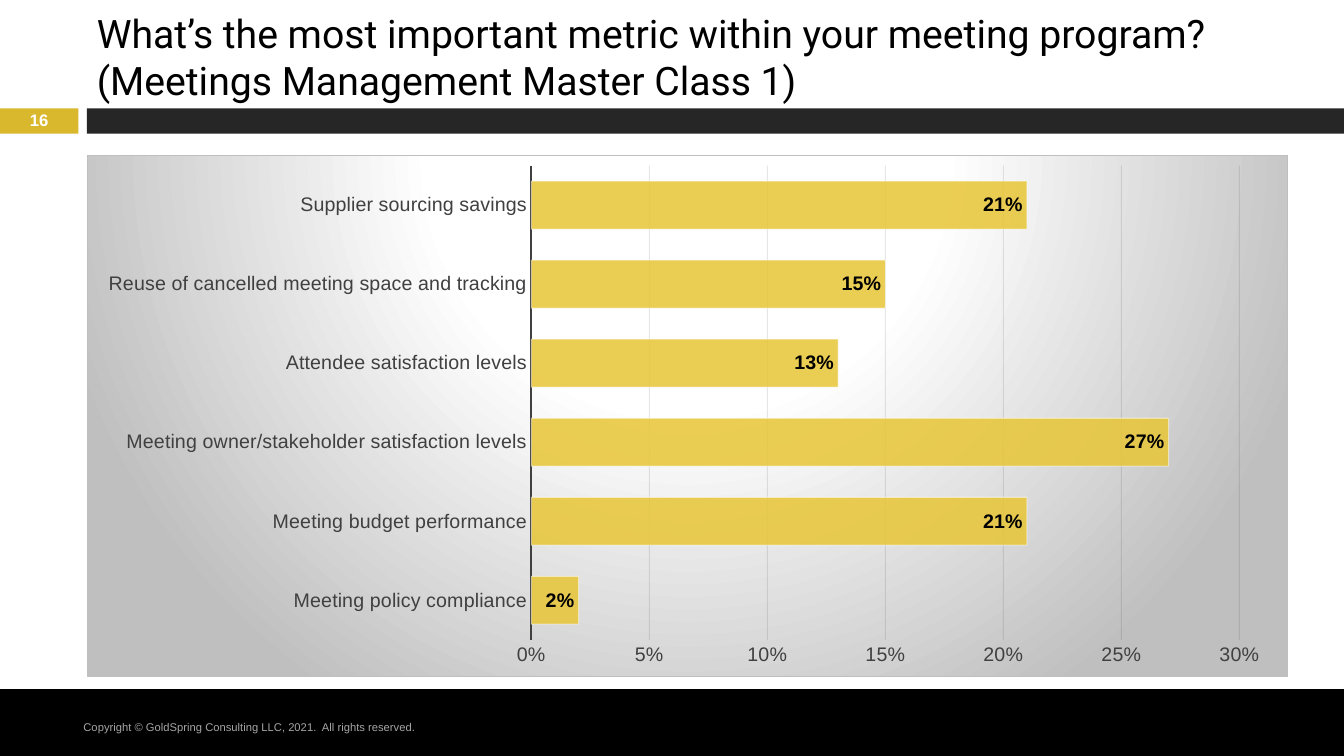
from lxml import etree
from pptx import Presentation
from pptx.chart.data import CategoryChartData
from pptx.dml.color import RGBColor
from pptx.enum import chart as ch, shapes, text
from pptx.oxml import parse_xml
from pptx.oxml.ns import nsdecls, qn
from pptx.util import Pt

WIDTH, HEIGHT = 960, 540
MARGIN = 62
METRICS = [
    ("Meeting policy compliance", 0.02),
    ("Meeting budget performance", 0.21),
    ("Meeting owner/stakeholder satisfaction levels", 0.27),
    ("Attendee satisfaction levels", 0.13),
    ("Reuse of cancelled meeting space and tracking", 0.15),
    ("Supplier sourcing savings", 0.21),
]


def color(value):
    return RGBColor.from_string(value)


def style(font, size, value, name="Arial", bold=False):
    font.size, font.name, font.bold = Pt(size), name, bold
    font.color.rgb = color(value)


def set_line(line, value, width):
    line.color.rgb = color(value)
    line.width = Pt(width)


def set_alpha(element, percent):
    """Make every solid colour below the element partly transparent."""
    for node in element.iter(qn("a:srgbClr")):
        etree.SubElement(node, qn("a:alpha")).set("val", str(percent * 1000))


def add_bar(page, box, value):
    bar = page.shapes.add_shape(shapes.MSO_SHAPE.RECTANGLE, *map(Pt, box))
    bar.shadow.inherit = False
    bar.fill.solid()
    bar.fill.fore_color.rgb = color(value)
    bar.line.fill.background()
    return bar


def add_label(page, box, words, size, value, bold=False):
    label = page.shapes.add_textbox(*map(Pt, box))
    frame = label.text_frame
    frame.word_wrap = True
    frame.vertical_anchor = text.MSO_ANCHOR.MIDDLE
    frame.text = words
    para = frame.paragraphs[0]
    style(para.runs[0].font, size, value, bold=bold)
    return para


def add_footer(page, box):
    left, top, width, height = box
    band = add_bar(page, box, "000000")
    set_line(band.line, "000000", 1.5)
    add_label(page, (left + 52.5, top + 18, 353, 16),
              "Copyright © GoldSpring Consulting LLC, 2021.  All rights reserved.",
              8, "A6A6A6")


def add_number_strip(page, box, number):
    left, top, width, height = box
    tab = 56
    add_bar(page, box, "FFFFFF")
    add_bar(page, (left, top + 4, tab, 18), "DAB82E")
    add_bar(page, (left + MARGIN, top + 4, width - MARGIN, 18), "262626")
    para = add_label(page, (left, top + 4, tab, 19.5), number, 11.9, "FFFFFF", True)
    para.alignment = text.PP_ALIGN.CENTER
    para.line_spacing = 0.8


def set_title(page, box, words):
    title = page.shapes.title
    title.left, title.top, title.width, title.height = map(Pt, box)
    frame = title.text_frame
    frame.word_wrap = True
    frame.auto_size = text.MSO_AUTO_SIZE.NONE
    frame.vertical_anchor = text.MSO_ANCHOR.MIDDLE
    frame.text = words
    para = frame.paragraphs[0]
    para.alignment = text.PP_ALIGN.LEFT
    para.line_spacing = 1
    style(para.runs[0].font, 28, "000000", "Roboto")
    page.shapes._spTree.append(title._element)


def set_background(chart):
    """Fill the chart area with a radial gradient and a thin border."""
    stops = "".join(
        f'<a:gs pos="{pos * 1000}"><a:srgbClr val="{value}"/></a:gs>'
        for pos, value in [(0, "FFFFFF"), (39, "FFFFFF"), (100, "BFBFBF")])
    chart._chartSpace.find(qn("c:chart")).addnext(parse_xml(
        f'<c:spPr {nsdecls("c", "a")}><a:gradFill><a:gsLst>{stops}</a:gsLst>'
        '<a:path path="circle">'
        '<a:fillToRect l="50000" t="-80000" r="50000" b="180000"/></a:path></a:gradFill>'
        '<a:ln w="9525"><a:solidFill><a:srgbClr val="BFBFBF"/></a:solidFill></a:ln>'
        '</c:spPr>'))


def set_plot_layout(chart, **fractions):
    area = chart._chartSpace.find(".//" + qn("c:plotArea"))
    for layout in area.findall(qn("c:layout")):
        area.remove(layout)
    sizes = "".join(f'<c:{key} val="{value}"/>' for key, value in fractions.items())
    area.insert(0, parse_xml(
        f'<c:layout {nsdecls("c")}><c:manualLayout><c:layoutTarget val="inner"/>'
        f'<c:xMode val="edge"/><c:yMode val="edge"/>{sizes}'
        '</c:manualLayout></c:layout>'))


def format_axes(chart):
    names, values = chart.category_axis, chart.value_axis
    for axis in (names, values):
        axis.major_tick_mark = axis.minor_tick_mark = ch.XL_TICK_MARK.NONE
        style(axis.tick_labels.font, 14, "404040")
    names.has_major_gridlines = False
    set_line(names.format.line, "404040", 1.5)
    values.minimum_scale, values.maximum_scale, values.major_unit = 0, 0.3, 0.05
    values.tick_labels.number_format = "0%"
    values.tick_labels.number_format_is_linked = False
    values.has_major_gridlines = True
    set_line(values.major_gridlines.format.line, "0D0D0D", 0.75)
    set_alpha(values._element.find(qn("c:majorGridlines")), 10)
    values.format.line.fill.background()


def format_bars(plot):
    plot.gap_width = 65
    plot.vary_by_categories = False
    series = plot.series[0]
    series.invert_if_negative = False
    series.format.fill.solid()
    series.format.fill.fore_color.rgb = color("E7C535")
    set_line(series.format.line, "FFFFFF", 0.75)
    look = series._element.find(qn("c:spPr"))
    set_alpha(look.find(qn("a:solidFill")), 85)
    set_alpha(look.find(qn("a:ln")), 50)
    labels = series.data_labels
    labels.show_value = True
    labels.position = ch.XL_LABEL_POSITION.INSIDE_END
    labels.number_format = "0%"
    labels.number_format_is_linked = False
    style(labels.font, 14, "000000", bold=True)


def add_metric_chart(page, box):
    data = CategoryChartData(number_format="0%")
    data.categories = [name for name, share in METRICS]
    data.add_series("Series 1", [share for name, share in METRICS])
    chart = page.shapes.add_chart(
        ch.XL_CHART_TYPE.BAR_CLUSTERED, *map(Pt, box), data).chart
    chart.has_legend = chart.has_title = False
    style(chart.font, 14, "000000")
    format_axes(chart)
    format_bars(chart.plots[0])
    set_plot_layout(chart, x=0.37, y=0.02, w=0.59, h=0.91)
    set_background(chart)


def main():
    deck = Presentation()
    deck.slide_width, deck.slide_height = Pt(WIDTH), Pt(HEIGHT)
    page = deck.slides.add_slide(deck.slide_layouts[5])
    add_footer(page, (0, 493, WIDTH, HEIGHT - 493))
    add_number_strip(page, (0, 73.5, WIDTH, 25), "16")
    set_title(page, (MARGIN, 18, 929, 44),
              "What’s the most important metric within your meeting program? "
              "(Meetings Management Master Class 1)")
    add_metric_chart(page, (MARGIN, 110.5, 858, 373))
    deck.save("out.pptx")


if __name__ == "__main__":
    main()
